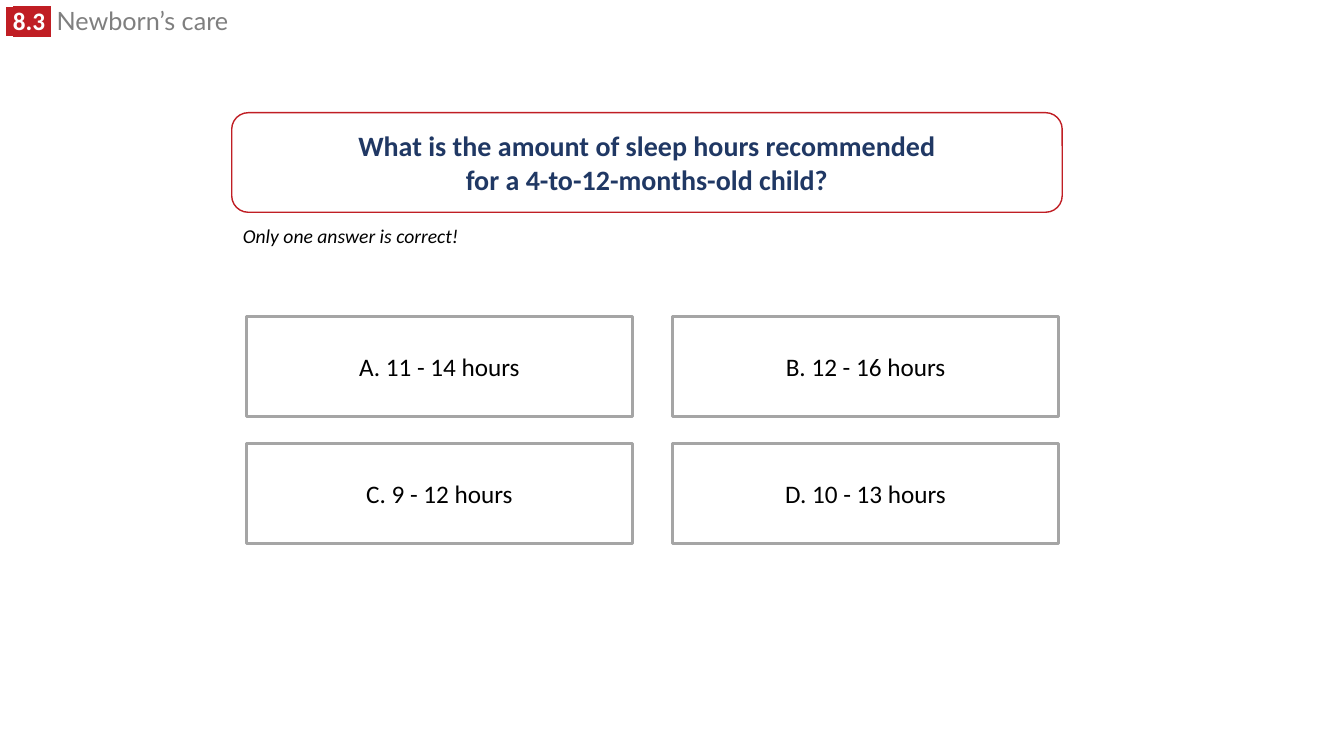
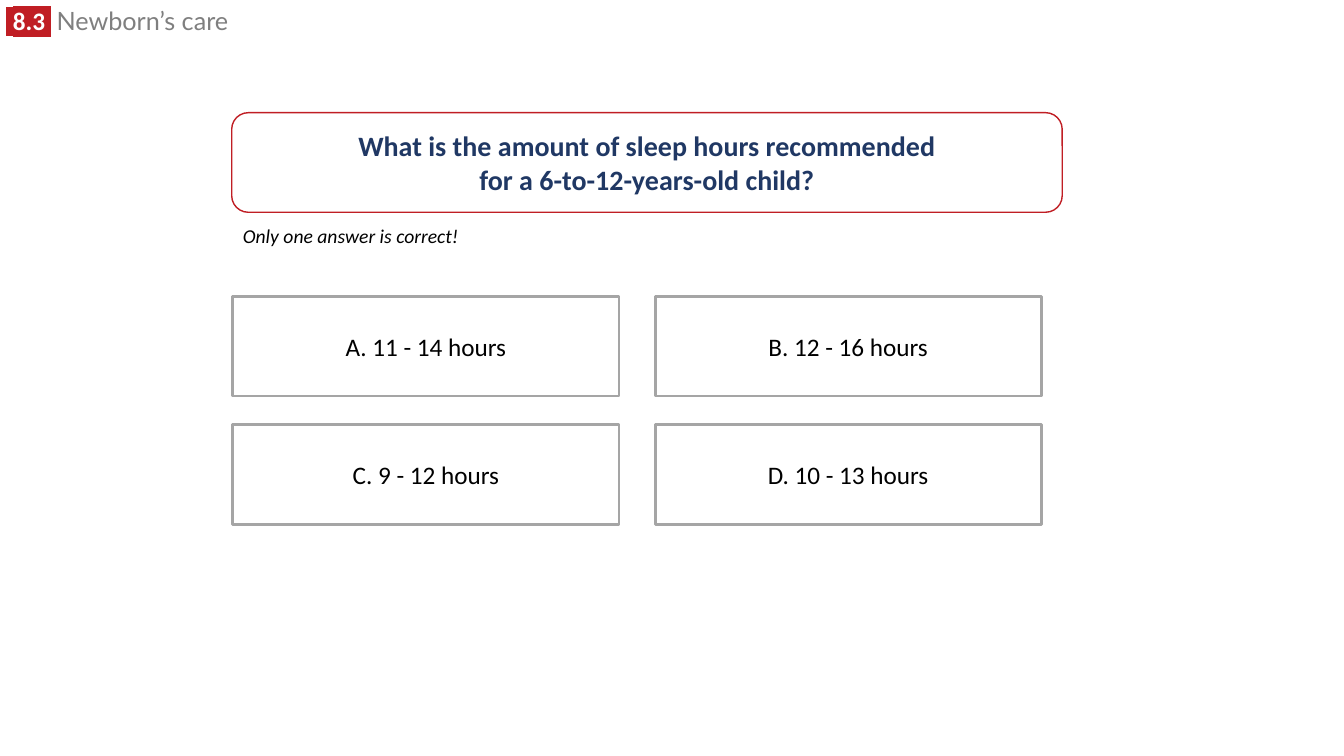
"""Build two quiz slides on the sleep hours of children."""
from lxml import etree
from pptx import Presentation
from pptx.dml.color import RGBColor
from pptx.enum.shapes import MSO_SHAPE
from pptx.enum.text import MSO_ANCHOR, MSO_AUTO_SIZE, PP_ALIGN
from pptx.oxml.ns import qn
from pptx.util import Cm, Pt

RECT, ROUND = MSO_SHAPE.RECTANGLE, MSO_SHAPE.ROUNDED_RECTANGLE
CENTER, MIDDLE = PP_ALIGN.CENTER, MSO_ANCHOR.MIDDLE
GROW = MSO_AUTO_SIZE.SHAPE_TO_FIT_TEXT

WHITE = RGBColor(0xFF, 0xFF, 0xFF)
BLACK = RGBColor(0, 0, 0)
RED = RGBColor(0xC0, 0x1E, 0x24)
NAVY = RGBColor(0x20, 0x38, 0x64)
GREY = RGBColor(0x7F, 0x7F, 0x7F)
SILVER = RGBColor(0xA5, 0xA5, 0xA5)
BODY = "Calibri"

HEADER = [
    (" ", "Arial", True),
    ("8.3 ", BODY, True),
    (" ", BODY, False),
    ("Newborn’s care", "Lato", False),
]
LEAD = "What is the amount of sleep hours recommended"
HINT = "Only one answer is correct!"
ANSWERS = ["A. 11 - 14 hours", "B. 12 - 16 hours", "C. 9 - 12 hours", "D. 10 - 13 hours"]
QUIZZES = [
    {"ask": "for a 4-to-12-months-old child?", "start": (6.21, 7.98), "gap": (1.01, 0.69)},
    {"ask": "for a 6-to-12-years-old child?", "start": (5.87, 7.47), "gap": (0.91, 0.72)},
]
COLS = 2
WIDTH, HEIGHT = 9.73, 2.51


def style(para, size, color, bold=False, italic=False):
    font = para.font
    font.name, font.size, font.bold, font.italic = BODY, Pt(size), bold, italic
    font.color.rgb = color


def add_label(slide, left, top, width, height):
    label = slide.shapes.add_textbox(Cm(left), Cm(top), Cm(width), Cm(height))
    frame = label.text_frame
    frame.word_wrap = True
    frame.auto_size = GROW
    return label, frame.paragraphs[0]


def add_box(slide, kind, area, lines, edge, weight, size, color, bold=False):
    box = slide.shapes.add_shape(kind, *map(Cm, area))
    box.shadow.inherit = False
    box.fill.solid()
    box.fill.fore_color.rgb = WHITE
    box.line.color.rgb = edge
    box.line.width = Pt(weight)
    frame = box.text_frame
    frame.word_wrap = True
    frame.vertical_anchor = MIDDLE
    frame.text = "\n".join(lines)
    for para in frame.paragraphs:
        para.alignment = CENTER
        style(para, size, color, bold)


def mark(run, color):
    fill = run.font._element.find(qn("a:solidFill"))
    light = etree.Element(qn("a:highlight"))
    etree.SubElement(light, qn("a:srgbClr"), val=str(color))
    fill.addnext(light)


def add_header(slide, layout):
    label, para = add_label(slide, -0.1, 0.15, 7.01, 0.86)
    para.line_spacing = 0.8
    para.font.size = Pt(18)
    for text, name, badge in HEADER:
        run = para.add_run()
        run.text = text
        run.font.name = name
        run.font.size = Pt(18)
        run.font.bold = badge
        run.font.color.rgb = WHITE if badge else GREY
        if badge:
            mark(run, RED)
    layout.shapes.element.append(label.element)


def add_quiz(slide, quiz):
    area = (5.84, 2.84, 20.93, HEIGHT)
    add_box(slide, ROUND, area, [LEAD, quiz["ask"]], RED, 1, 20, NAVY, True)
    _, para = add_label(slide, 5.87, 5.51, 6, 1.45)
    para.text = HINT
    style(para, 14, BLACK, italic=True)
    left, top = quiz["start"]
    across, down = quiz["gap"]
    for index, answer in enumerate(ANSWERS):
        row, col = divmod(index, COLS)
        area = (left + col * (WIDTH + across), top + row * (HEIGHT + down), WIDTH, HEIGHT)
        add_box(slide, RECT, area, [answer], SILVER, 2, 18, BLACK)


def main():
    deck = Presentation()
    deck.slide_width, deck.slide_height = Cm(33.87), Cm(19.05)
    blank = deck.slide_layouts[6]
    slides = [deck.slides.add_slide(blank) for _ in QUIZZES]
    add_header(slides[0], blank)
    for slide, quiz in zip(slides, QUIZZES):
        add_quiz(slide, quiz)
    deck.save("out.pptx")


if __name__ == "__main__":
    main()
